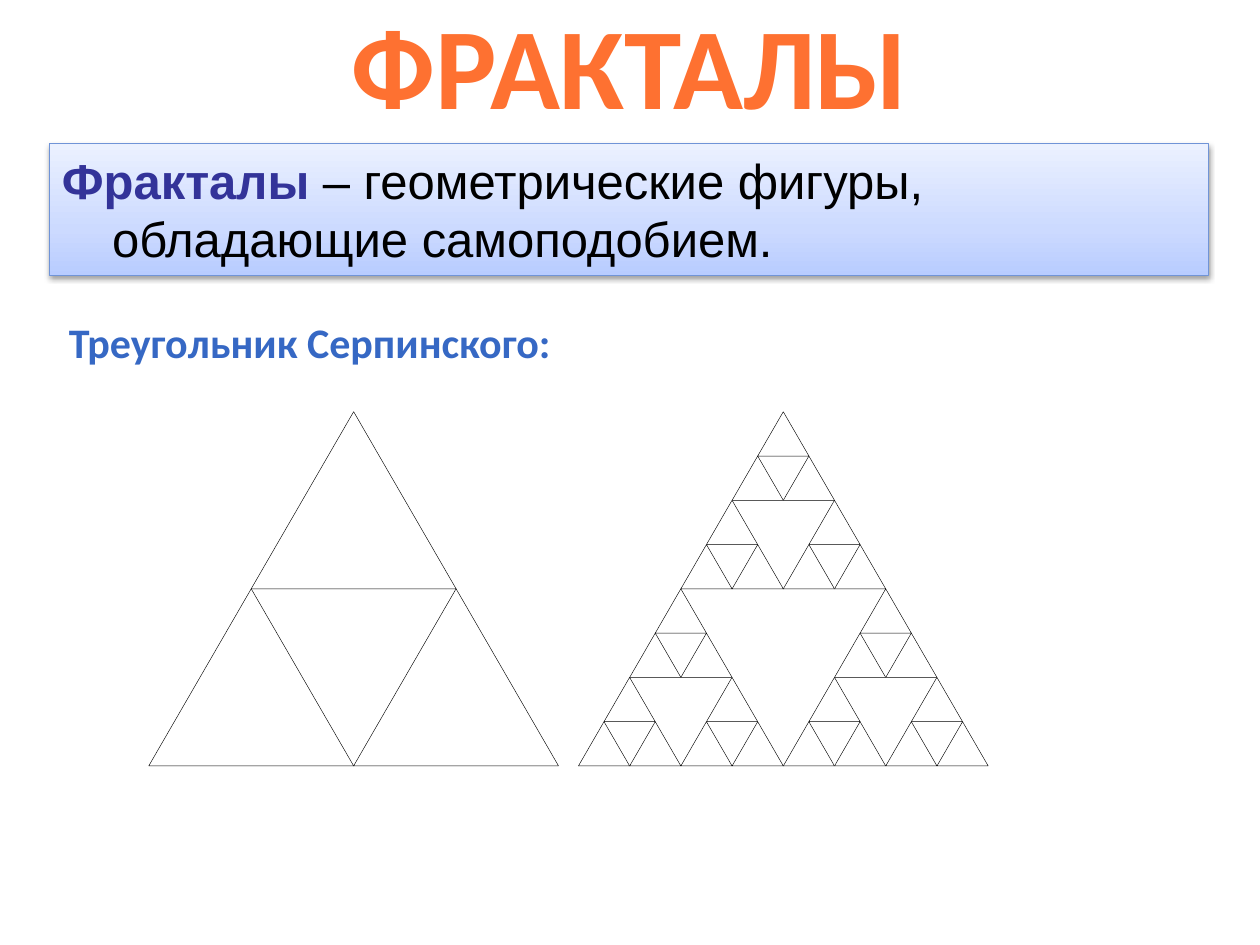
"""Build a slide that defines fractals and shows the Sierpinski triangle."""
from copy import deepcopy
from dataclasses import dataclass

from lxml.etree import SubElement
from pptx import Presentation
from pptx.dml.color import RGBColor
from pptx.enum.shapes import MSO_SHAPE as Shape
from pptx.enum.text import MSO_ANCHOR as Anchor, MSO_AUTO_SIZE as AutoSize, PP_ALIGN as Align
from pptx.oxml.ns import qn
from pptx.util import Cm, Pt


@dataclass(frozen=True)
class Box:
    left: float
    top: float
    width: float
    height: float

    def emu(self):
        return [Cm(v) for v in (self.left, self.top, self.width, self.height)]

    def corners(self):
        w, h = self.width / 2, self.height / 2
        return [
            Box(self.left + w / 2, self.top, w, h),
            Box(self.left + w, self.top + h, w, h),
            Box(self.left, self.top + h, w, h),
        ]


@dataclass(frozen=True)
class Fractal:
    box: Box
    depth: int


TITLE = Box(0, 0.41, 25.4, 1.75)
DEFINITION = Box(1, 2.9, 23.37, 2.65)
CAPTION = Box(1.14, 6.25, 10.31, 1.27)
FRACTALS = [
    Fractal(Box(3, 8.3, 8.26, 7.14), 1),
    Fractal(Box(11.66, 8.3, 8.26, 7.14), 3),
]
GRADIENT = [(0, "B8CCFF"), (0.35, "CCDAFF"), (1, "EBF1FF")]


def rgb(color: str) -> RGBColor:
    return RGBColor.from_string(color)


def add_text(p, text: str, *, size: float, color: str, font: str = "Calibri", bold: bool = True):
    r = p.add_run()
    r.text = text
    r.font.name = font
    r.font.size = Pt(size)
    r.font.bold = bold
    r.font.color.rgb = rgb(color)


def fill_gradient(sp, stops: list[tuple[float, str]], angle: float):
    sp.fill.gradient()
    sp.fill.gradient_angle = angle
    gs_list = sp._element.spPr.find(".//" + qn("a:gsLst"))
    while len(gs_list) < len(stops):
        gs_list.append(deepcopy(gs_list[0]))
    for stop, (position, color) in zip(sp.fill.gradient_stops, stops):
        stop.position = position
        stop.color.rgb = rgb(color)


def add_shadow(sp, *, blur: float, distance: float, alpha: int):
    sp.shadow.inherit = False
    effects = sp._element.spPr.find(qn("a:effectLst"))
    shadow = SubElement(effects, qn("a:outerShdw"), blurRad=str(Pt(blur)),
                        dist=str(Pt(distance)), dir="5400000", rotWithShape="0")
    black = SubElement(shadow, qn("a:srgbClr"), val="000000")
    SubElement(black, qn("a:alpha"), val=str(alpha * 1000))


def add_title(s):
    sp = s.shapes.title
    sp.left, sp.top, sp.width, sp.height = TITLE.emu()
    tf = sp.text_frame
    tf.auto_size = AutoSize.NONE
    tf.vertical_anchor = Anchor.MIDDLE
    p = tf.paragraphs[0]
    p.alignment = Align.CENTER
    add_text(p, "ФРАКТАЛЫ", size=66, color="FE7131")


def add_definition(s):
    sp = s.shapes.add_shape(Shape.RECTANGLE, *DEFINITION.emu())
    fill_gradient(sp, GRADIENT, 90)
    sp.line.color.rgb = rgb("7094D7")
    sp.line.width = Pt(0.75)
    add_shadow(sp, blur=3.1, distance=1.6, alpha=38)
    tf = sp.text_frame
    tf.word_wrap = True
    tf.vertical_anchor = Anchor.TOP
    p = tf.paragraphs[0]
    p.alignment = Align.LEFT
    p_pr = p._p.get_or_add_pPr()
    p_pr.set("marL", str(Cm(1.01)))
    p_pr.set("indent", str(Cm(-1.01)))
    add_text(p, "Фракталы", size=28, color="333399", font="Arial")
    add_text(p, " – геометрические фигуры, обладающие самоподобием.",
             size=28, color="000000", font="Arial", bold=False)


def add_caption(s):
    tf = s.shapes.add_textbox(*CAPTION.emu()).text_frame
    tf.word_wrap = False
    add_text(tf.paragraphs[0], "Треугольник Серпинского:", size=24, color="3668C4")


def draw_fractal(shapes, box: Box, depth: int):
    if depth:
        for corner in box.corners():
            draw_fractal(shapes, corner, depth - 1)
        return
    sp = shapes.add_shape(Shape.ISOSCELES_TRIANGLE, *box.emu())
    sp.shadow.inherit = False
    sp.fill.solid()
    sp.fill.fore_color.rgb = rgb("FFFFFF")
    sp.line.color.rgb = rgb("000000")
    sp.line.width = Pt(0.25)


def main():
    prs = Presentation()
    prs.slide_width, prs.slide_height = Cm(25.4), Cm(19.05)
    s = prs.slides.add_slide(prs.slide_layouts[5])
    add_title(s)
    add_definition(s)
    add_caption(s)
    for fractal in reversed(FRACTALS):
        draw_fractal(s.shapes.add_group_shape().shapes, fractal.box, fractal.depth)
    prs.save("out.pptx")


if __name__ == "__main__":
    main()
